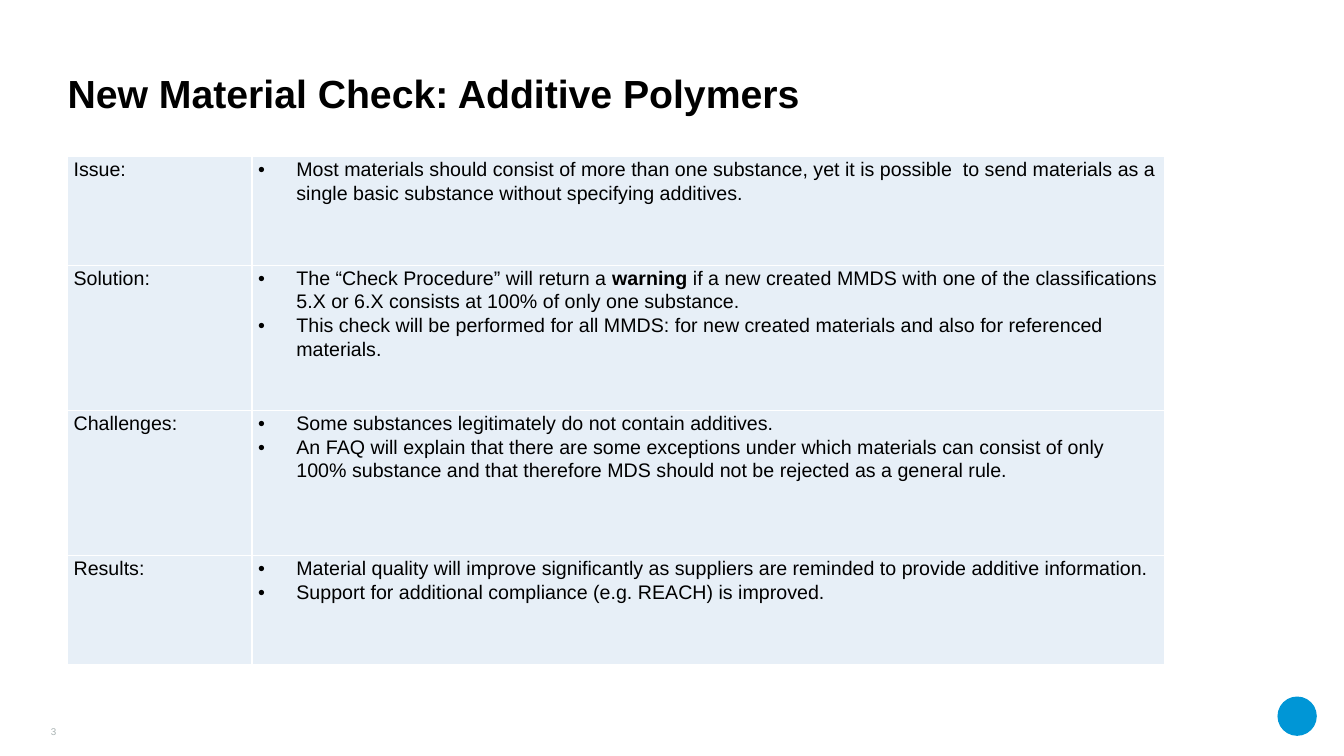
from dataclasses import dataclass

from lxml import etree
from pptx import Presentation
from pptx import util as u
from pptx.dml.color import RGBColor
from pptx.enum import shapes, text
from pptx.oxml import ns

FONT = "Arial"
BLACK, WHITE, GREY = "000000", "FFFFFF", "A8B2B2"
CELL_FILL, BADGE_BLUE = "E7EFF7", "0096D6"
BULLET_INDENT = u.Inches(0.38)
COLUMN_WIDTHS = (1.83, 9.05)


@dataclass
class Topic:
    label: str
    points: list[str]
    height: float


TOPICS = [
    Topic("Issue:", [
        "Most materials should consist of more than one substance, yet it is possible  to send "
        "materials as a single basic substance without specifying additives.",
    ], 1.08),
    Topic("Solution:", [
        "The “Check Procedure” will return a *warning* if a new created MMDS with one of the "
        "classifications 5.X or 6.X consists at 100% of only one substance.",
        "This check will be performed for all MMDS: for new created materials and also for "
        "referenced materials.",
    ], 1.44),
    Topic("Challenges:", [
        "Some substances legitimately do not contain additives.",
        "An FAQ will explain that there are some exceptions under which materials can consist of "
        "only 100% substance and that therefore MDS should not be rejected as a general rule.",
    ], 1.44),
    Topic("Results:", [
        "Material quality will improve significantly as suppliers are reminded to provide "
        "additive information.",
        "Support for additional compliance (e.g. REACH) is improved.",
    ], 1.08),
]


def rgb(value: str) -> RGBColor:
    return RGBColor.from_string(value)


def format_run(run, size: float, color: str = BLACK, bold: bool = False) -> None:
    run.font.name = FONT
    run.font.size = u.Pt(size)
    run.font.bold = bold
    run.font.color.rgb = rgb(color)


def clear_margins(frame) -> None:
    frame.margin_left = frame.margin_right = frame.margin_top = frame.margin_bottom = 0


def add_child(parent, tag: str, **attributes: str):
    return etree.SubElement(parent, ns.qn(tag), attributes)


def add_bullet(paragraph) -> None:
    properties = paragraph._p.get_or_add_pPr()
    properties.set("marL", str(BULLET_INDENT))
    properties.set("indent", str(-BULLET_INDENT))
    add_child(properties, "a:buFont", typeface=FONT)
    add_child(properties, "a:buChar", char="•")
    tabs = add_child(properties, "a:tabLst")
    add_child(tabs, "a:tab", pos=str(u.Inches(0.5)), algn="l")


def style_cell(cell) -> None:
    properties = cell._tc.get_or_add_tcPr()
    for side in ("a:lnL", "a:lnR", "a:lnT", "a:lnB"):
        line = add_child(properties, side, w=str(u.Pt(1)))
        fill = add_child(line, "a:solidFill")
        add_child(fill, "a:srgbClr", val=WHITE)
    cell.fill.solid()
    cell.fill.fore_color.rgb = rgb(CELL_FILL)
    cell.margin_left = cell.margin_right = u.Inches(0.06)
    cell.margin_top, cell.margin_bottom = u.Inches(0.01), 0


def fill_cell(cell, lines: list[str], bulleted: bool) -> None:
    """Write one paragraph per line; words between asterisks are bold."""
    style_cell(cell)
    cell.text_frame.text = "\n".join(lines)
    for paragraph, line in zip(cell.text_frame.paragraphs, lines):
        paragraph.line_spacing = 1.07
        if bulleted:
            add_bullet(paragraph)
        else:
            paragraph.space_after = u.Pt(8)
        first, *others = line.split("*")
        paragraph.runs[0].text = first
        for segment in others:
            paragraph.add_run().text = segment
        for index, run in enumerate(paragraph.runs):
            format_run(run, 14, bold=index % 2 == 1)


def add_title(slide) -> None:
    title = slide.shapes.title
    title.left, title.top = u.Inches(0.67), u.Inches(0.33)
    title.width, title.height = u.Inches(12), u.Inches(0.83)
    frame = title.text_frame
    frame.text = "New Material Check: Additive Polymers"
    frame.auto_size = text.MSO_AUTO_SIZE.NONE
    frame.vertical_anchor = text.MSO_ANCHOR.BOTTOM
    clear_margins(frame)
    paragraph = frame.paragraphs[0]
    paragraph.alignment = text.PP_ALIGN.LEFT
    paragraph.line_spacing = 0.9
    format_run(paragraph.runs[0], 28, bold=True)


def add_topic_table(slide) -> None:
    table = slide.shapes.add_table(
        len(TOPICS), len(COLUMN_WIDTHS), u.Inches(0.67), u.Inches(1.55),
        u.Inches(sum(COLUMN_WIDTHS)), u.Inches(sum(topic.height for topic in TOPICS)),
    ).table
    table.first_row = table.horz_banding = False
    for column, width in zip(table.columns, COLUMN_WIDTHS):
        column.width = u.Inches(width)
    for row, topic in zip(table.rows, TOPICS):
        row.height = u.Inches(topic.height)
        fill_cell(row.cells[0], [topic.label], bulleted=False)
        fill_cell(row.cells[1], topic.points, bulleted=True)


def add_page_number(slide) -> None:
    box = slide.shapes.add_textbox(
        u.Inches(0.23), u.Inches(7.08), u.Inches(0.33), u.Inches(0.24))
    frame = box.text_frame
    frame.text = "3"
    frame.word_wrap = False
    frame.vertical_anchor = text.MSO_ANCHOR.BOTTOM
    clear_margins(frame)
    frame.paragraphs[0].alignment = text.PP_ALIGN.RIGHT
    format_run(frame.paragraphs[0].runs[0], 7, GREY)


def add_badge(slide) -> None:
    badge = slide.shapes.add_shape(
        shapes.MSO_SHAPE.OVAL, u.Inches(12.67), u.Inches(6.91), u.Inches(0.39), u.Inches(0.39))
    badge.shadow.inherit = False
    badge.fill.solid()
    badge.fill.fore_color.rgb = rgb(BADGE_BLUE)
    badge.line.fill.background()


def main() -> None:
    presentation = Presentation()
    presentation.slide_width, presentation.slide_height = u.Inches(13.33), u.Inches(7.5)
    slide = presentation.slides.add_slide(presentation.slide_layouts.get_by_name("Title Only"))
    add_badge(slide)
    add_title(slide)
    add_page_number(slide)
    add_topic_table(slide)
    presentation.save("out.pptx")


if __name__ == "__main__":
    main()
